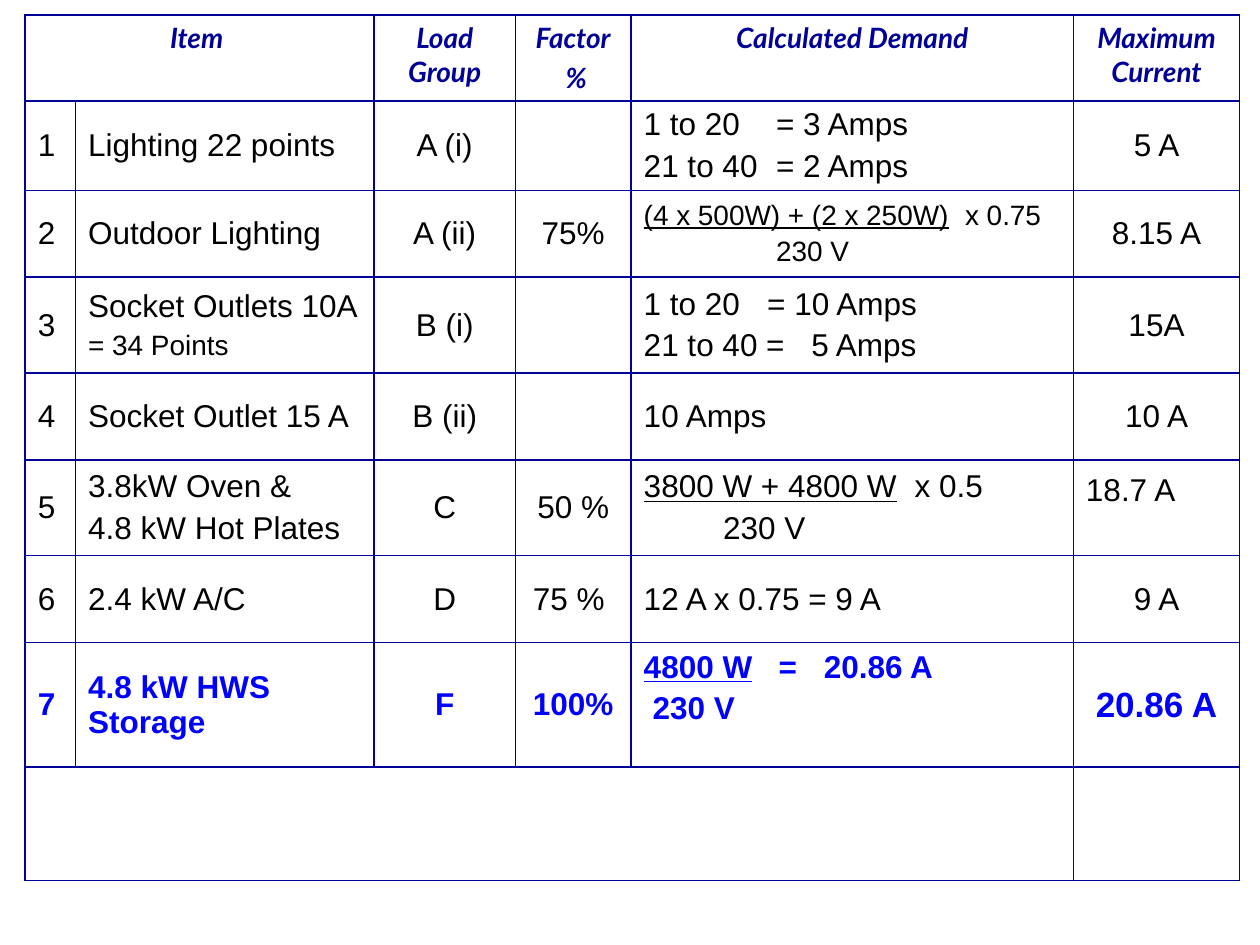
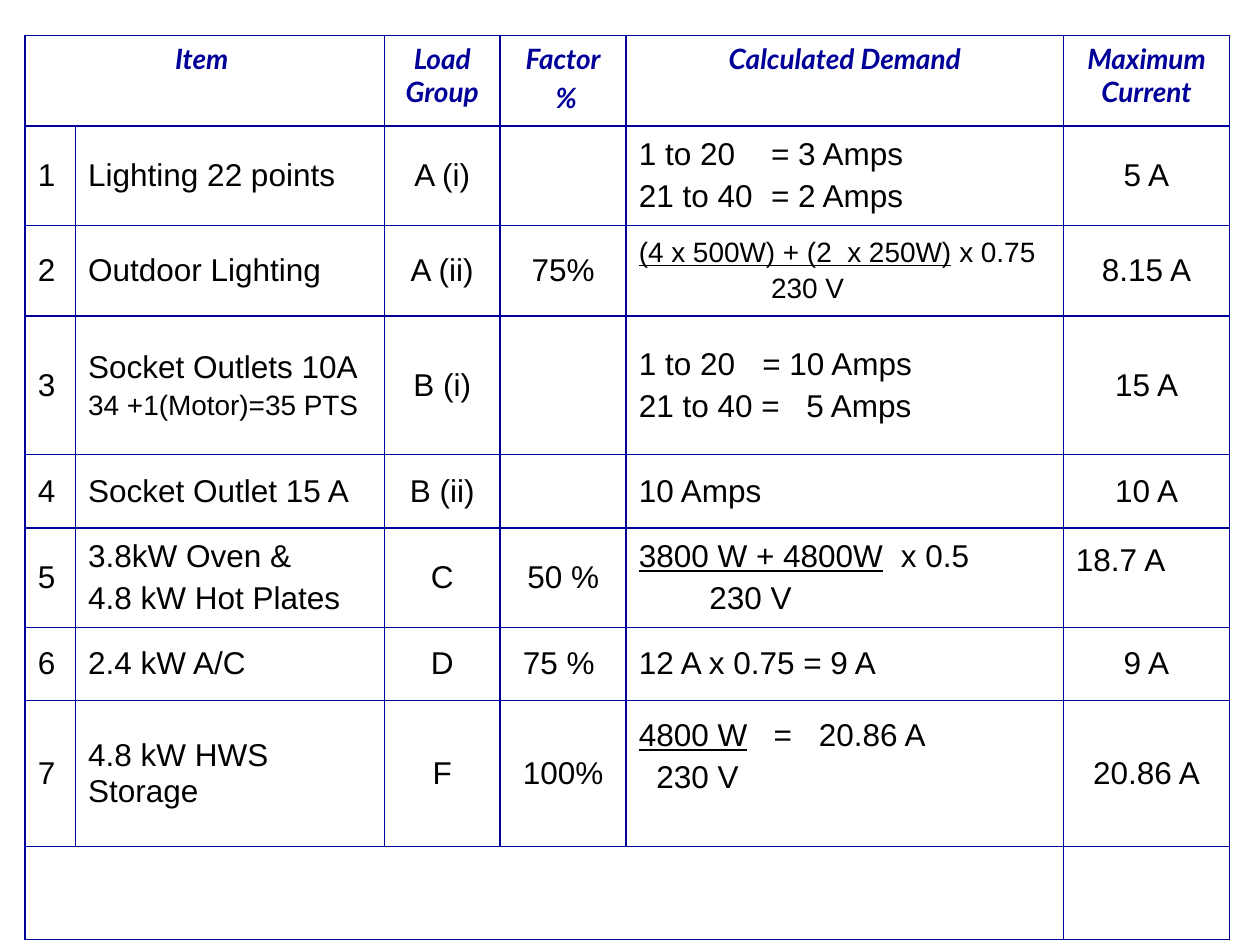
import pptx
import pptx.util
import pptx.dml.color
import pptx.enum.text
import pptx.oxml.ns
from lxml import etree

Inches = pptx.util.Inches
Pt = pptx.util.Pt
ANCHOR = pptx.enum.text.MSO_ANCHOR
ALIGN = pptx.enum.text.PP_ALIGN

COLOURS = {"border": "010199", "heading": "000099", "body": "000000", "highlight": "0000FF"}
HEADING = {"name": "Lato", "size": 16, "bold": True, "italic": True, "colour": "heading"}
BODY = {"name": "Arial", "size": 18, "bold": False, "italic": False, "colour": "body"}
HIGHLIGHT = {"bold": True, "colour": "highlight"}

HEADER = [["Item "], [], ["Load Group"], ["Factor", " %"], ["Calculated Demand"], ["Maximum Current"]]
LOADS = [
    [["1"], ["Lighting 22 points"], ["A (i)"], [],
     [{"text": "1 to 20\t= 3 Amps", "tabs": [1.05]}, {"text": "21 to 40\t= 2 Amps", "tabs": [1.05]}],
     ["5 A"]],
    [["2"], ["Outdoor Lighting"], ["A (ii)"], ["75%"],
     [{"over": "(4 x 500W) + (2 x 250W)", "text": "\tx 0.75", "size": 16, "tabs": [2.55]},
      {"text": "230 V", "size": 16, "indent": 1.05}],
     ["8.15 A"]],
    [["3"], ["Socket Outlets 10A", {"text": "= 34 Points", "size": 16}], ["B (i)"], [],
     [{"text": "1 to 20\t= 10 Amps", "tabs": [0.98]}, {"text": "21 to 40 =\t5 Amps", "tabs": [1.33]}],
     ["15A"]],
    [["4"], ["Socket Outlet 15 A"], ["B (ii)"], [], ["10 Amps"], ["10 A"]],
    [["5"], ["3.8kW Oven &", "4.8 kW Hot Plates"], ["C"], ["50 %"],
     [{"over": "3800 W + 4800 W", "text": "\tx 0.5", "tabs": [2.15]}, {"text": "230 V", "indent": 0.63}],
     ["18.7 A"]],
    [["6"], ["2.4 kW A/C"], ["D"], ["75 % "], ["12 A x 0.75 = 9 A"], ["9 A"]],
    [["7"], ["4.8 kW HWS Storage"], ["F"], ["100%"],
     [{"over": "4800 W", "text": "\t=\t20.86 A", "tabs": [1.07, 1.43]}, {"text": "230 V", "indent": 0.07}],
     ["20.86 A"]],
]
TOTAL = [[], [], [], [], [], []]

TABLES = [
    {
        "place": (0.2, 0.12),
        "columns": [0.4, 2.37, 1.12, 0.92, 3.51, 1.32],
        "rows": [0.68, 0.71, 0.69, 0.76, 0.69, 0.76, 0.69, 0.99, 0.9],
        "highlight": 7,
        "changes": {(7, 5): [{"text": "20.86 A", "size": 20}]},
    },
    {
        "place": (0.2, 0.28),
        "columns": [0.4, 2.45, 0.92, 1, 3.47, 1.32],
        "rows": [0.72, 0.79, 0.72, 1.1, 0.58, 0.79, 0.58, 1.16, 0.74],
        "highlight": None,
        "changes": {
            (2, 4): [{"over": "(4 x 500W) + (2  x 250W)", "text": " x 0.75", "size": 16},
                     {"text": "230 V", "size": 16, "indent": 1.05}],
            (3, 1): ["Socket Outlets 10A", {"text": "34 +1(Motor)=35 PTS", "size": 16}],
            (3, 5): ["15 A"],
            (5, 4): [{"over": "3800 W + 4800W", "text": "\tx 0.5", "tabs": [2.08]},
                     {"text": "230 V", "indent": 0.56}],
            (7, 4): [{"over": "4800 W", "text": "\t=\t20.86 A", "tabs": [1.07, 1.43]},
                     {"text": "230 V", "indent": 0.14}],
        },
    },
]
CENTRED_COLUMNS = (2, 3, 5)
LEFT_CELLS = [(5, 5)]
RAISED_CELLS = [(5, 5), (7, 4)]
RAISED_MARGIN = 0.32


def add_node(parent, tag, **values):
    node = etree.SubElement(parent, pptx.oxml.ns.qn(tag))
    for key, value in values.items():
        node.set(key, str(value))
    return node


def add_span(para, text, style):
    span = para.add_run()
    span.text = text
    for key, value in style.items():
        if key == "colour":
            span.font.color.rgb = pptx.dml.color.RGBColor.from_string(COLOURS[value])
        else:
            setattr(span.font, key, Pt(value) if key == "size" else value)


def write_line(para, line, style, align):
    line = {"text": line} if isinstance(line, str) else line
    para.alignment = align
    properties = para._p.get_or_add_pPr()
    add_node(add_node(properties, "a:spcBef"), "a:spcPct", val=20000)
    if "indent" in line:
        properties.set("marL", str(Inches(line["indent"])))
        properties.set("indent", "0")
    if "tabs" in line:
        stops = add_node(properties, "a:tabLst")
        for stop in line["tabs"]:
            add_node(stops, "a:tab", pos=Inches(stop), algn="l")
    if "size" in line:
        style = {**style, "size": line["size"]}
    if "over" in line:
        add_span(para, line["over"], {**style, "underline": True})
    add_span(para, line["text"], style)


def frame_cell(cell):
    properties = cell._tc.get_or_add_tcPr()
    for side in ("a:lnL", "a:lnR", "a:lnT", "a:lnB"):
        border = add_node(properties, side, w=Pt(1))
        add_node(add_node(border, "a:solidFill"), "a:srgbClr", val=COLOURS["border"])
    cell.fill.background()


def fill_cell(cell, lines, row, column, highlighted):
    frame_cell(cell)
    cell.vertical_anchor = ANCHOR.MIDDLE if row else ANCHOR.TOP
    if (row, column) in RAISED_CELLS:
        cell.margin_bottom = Inches(RAISED_MARGIN)
    style = BODY if row else HEADING
    if highlighted:
        style = {**style, **HIGHLIGHT}
    centred = row == 0 or column in CENTRED_COLUMNS and (row, column) not in LEFT_CELLS
    align = ALIGN.CENTER if centred else ALIGN.LEFT
    for number, line in enumerate(lines):
        para = cell.text_frame.add_paragraph() if number else cell.text_frame.paragraphs[0]
        write_line(para, line, style, align)


def add_demand_table(page, layout):
    content = [HEADER, *LOADS, TOTAL]
    columns, rows = layout["columns"], layout["rows"]
    size = [Inches(sum(columns)), Inches(sum(rows))]
    place = [Inches(value) for value in layout["place"]]
    table = page.shapes.add_table(len(rows), len(columns), *place, *size).table
    table.first_row = table.horz_banding = False
    for column, width in zip(table.columns, columns):
        column.width = Inches(width)
    for row, height in zip(table.rows, rows):
        row.height = Inches(height)
    for row, cells in enumerate(content):
        for column, lines in enumerate(cells):
            lines = layout["changes"].get((row, column), lines)
            fill_cell(table.cell(row, column), lines, row, column, row == layout["highlight"])
    last = len(rows) - 1
    table.cell(0, 0).merge(table.cell(0, 1))
    table.cell(last, 0).merge(table.cell(last, 4))


def main():
    deck = pptx.Presentation()
    deck.slide_width, deck.slide_height = Inches(10), Inches(7.5)
    for layout in TABLES:
        add_demand_table(deck.slides.add_slide(deck.slide_layouts[6]), layout)
    deck.save("out.pptx")


if __name__ == "__main__":
    main()
